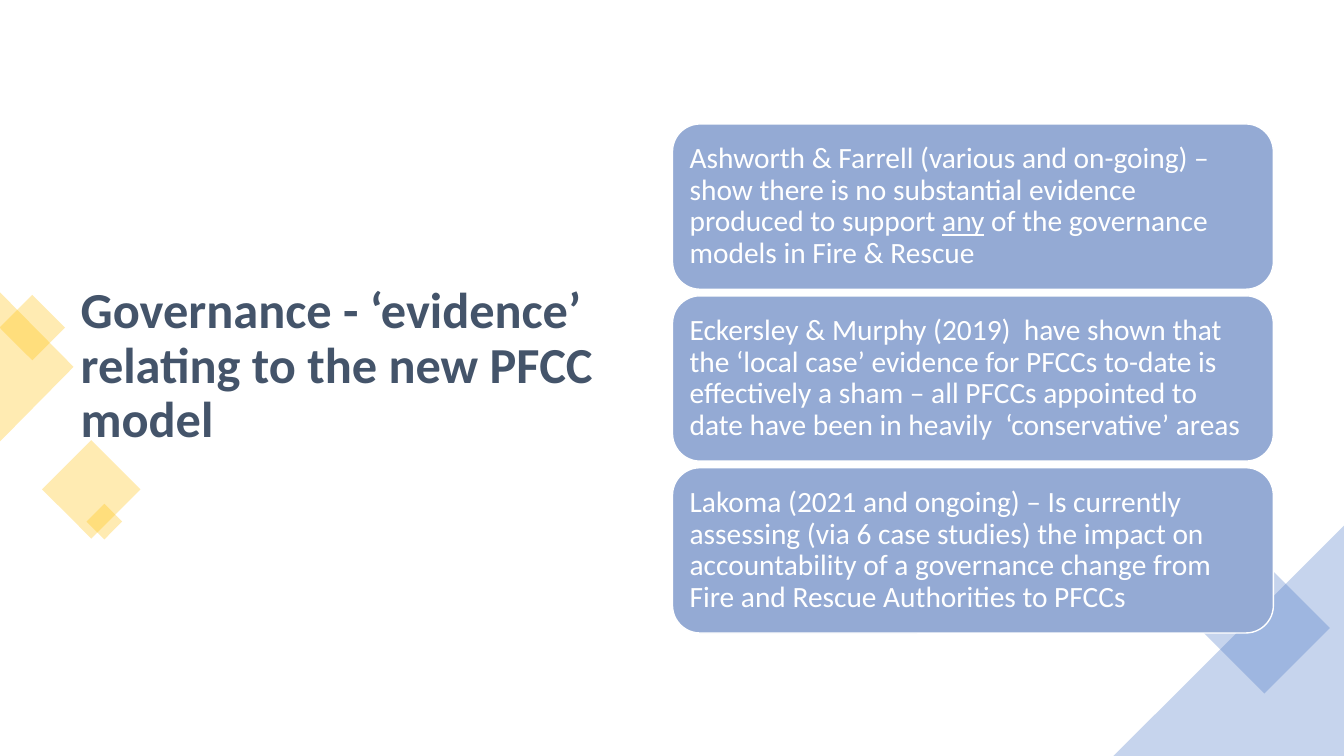
from lxml import etree
from pptx import Presentation
from pptx.dml.color import RGBColor
from pptx.enum.shapes import MSO_SHAPE
from pptx.enum.text import MSO_ANCHOR, MSO_AUTO_SIZE, PP_ALIGN
from pptx.oxml.ns import qn
from pptx.util import Inches, Pt

SQUARE = MSO_SHAPE.RECTANGLE
TRIANGLE = MSO_SHAPE.ISOSCELES_TRIANGLE
ROUNDED = MSO_SHAPE.ROUNDED_RECTANGLE
MIDDLE = MSO_ANCHOR.MIDDLE
LEFT = PP_ALIGN.LEFT
NO_AUTOFIT = MSO_AUTO_SIZE.NONE

NAVY, GOLD, BLUE, PERIWINKLE, WHITE = "44546A", "FFC000", "4472C4", "94AAD4", "FFFFFF"

HEADING = "Governance - ‘evidence’ relating to the new PFCC model"
STUDIES = [
    ("Ashworth & Farrell (various and on-going) – show there is no substantial "
     "evidence produced to support any of the governance models in Fire & Rescue", "any"),
    ("Eckersley & Murphy (2019)  have shown that the ‘local case’ evidence for PFCCs "
     "to-date is effectively a sham – all PFCCs appointed to date have been in heavily  "
     "‘conservative’ areas", ""),
    ("Lakoma (2021 and ongoing) – Is currently assessing (via 6 case studies) the impact "
     "on accountability of a governance change from Fire and Rescue Authorities to PFCCs", ""),
]

GOLD_EDGE = [(0, 2.9), (0.73, 3.64), (0, 4.38)]
ACCENTS = [
    (SQUARE, 0.09, 3.02, 0.46, 0.46, 45, GOLD),
    (SQUARE, 0.56, 4.51, 0.69, 0.69, 45, GOLD),
    (SQUARE, 0.91, 5.05, 0.25, 0.25, 45, GOLD),
    (TRIANGLE, 11.13, 6.12, 3.26, 1.62, 135, BLUE),
    (SQUARE, 12.08, 5.77, 0.92, 0.92, 45, BLUE),
]
ACCENT_OPACITY = 30

CARD_LEFT, CARD_WIDTH, CARD_HEIGHT = 6.67, 5.96, 1.64
FIRST_TOP, LAST_TOP = 1.23, 4.64


def rgb(color):
    return RGBColor.from_string(color)


def paint(shape, color, opacity=100):
    shape.shadow.inherit = False
    shape.fill.solid()
    shape.fill.fore_color.rgb = rgb(color)
    shape.line.fill.background()
    if opacity < 100:
        tint = shape.fill._xPr.find(qn("a:solidFill"))[0]
        etree.SubElement(tint, qn("a:alpha"), val=str(opacity * 1000))


def write(shape, text, size, color, bold=False, underlined="", inset=0.1):
    frame = shape.text_frame
    frame.word_wrap = True
    frame.auto_size = NO_AUTOFIT
    frame.vertical_anchor = MIDDLE
    frame.margin_left = frame.margin_right = Inches(inset)
    frame.margin_top = frame.margin_bottom = Inches(inset)
    paragraph = frame.paragraphs[0]
    paragraph.alignment = LEFT
    paragraph.line_spacing = 0.9
    before, mark, after = text.partition(underlined) if underlined else (text, "", "")
    for part in filter(None, (before, mark, after)):
        run = paragraph.add_run()
        run.text = part
        font = run.font
        font.name, font.size, font.bold = "Calibri", Pt(size), bold
        font.color.rgb = rgb(color)
        if part == mark:
            font.underline = True


def add_accents(slide):
    points = [(Inches(x), Inches(y)) for x, y in GOLD_EDGE]
    outline = slide.shapes.build_freeform(*points[0])
    outline.add_line_segments(points[1:], close=True)
    paint(outline.convert_to_shape(), GOLD, ACCENT_OPACITY)
    for kind, left, top, width, height, angle, color in ACCENTS:
        accent = slide.shapes.add_shape(
            kind, Inches(left), Inches(top), Inches(width), Inches(height))
        accent.rotation = angle
        paint(accent, color, ACCENT_OPACITY)


def add_studies(slide):
    pitch = (LAST_TOP - FIRST_TOP) / (len(STUDIES) - 1)
    for row, (finding, underlined) in enumerate(STUDIES):
        card = slide.shapes.add_shape(
            ROUNDED, Inches(CARD_LEFT), Inches(FIRST_TOP + row * pitch),
            Inches(CARD_WIDTH), Inches(CARD_HEIGHT))
        paint(card, PERIWINKLE)
        card.line.color.rgb = rgb(WHITE)
        card.line.width = Pt(1)
        write(card, finding, 21, WHITE, underlined=underlined, inset=0.09)


def main():
    deck = Presentation()
    deck.slide_width, deck.slide_height = Inches(13.33), Inches(7.5)
    slide = deck.slides.add_slide(deck.slide_layouts[5])
    heading = slide.shapes.title
    heading.left, heading.top = Inches(0.7), Inches(0.68)
    heading.width, heading.height = Inches(5.46), Inches(5.92)
    write(heading, HEADING, 36, NAVY, bold=True)
    add_accents(slide)
    add_studies(slide)
    deck.save("out.pptx")


if __name__ == "__main__":
    main()
